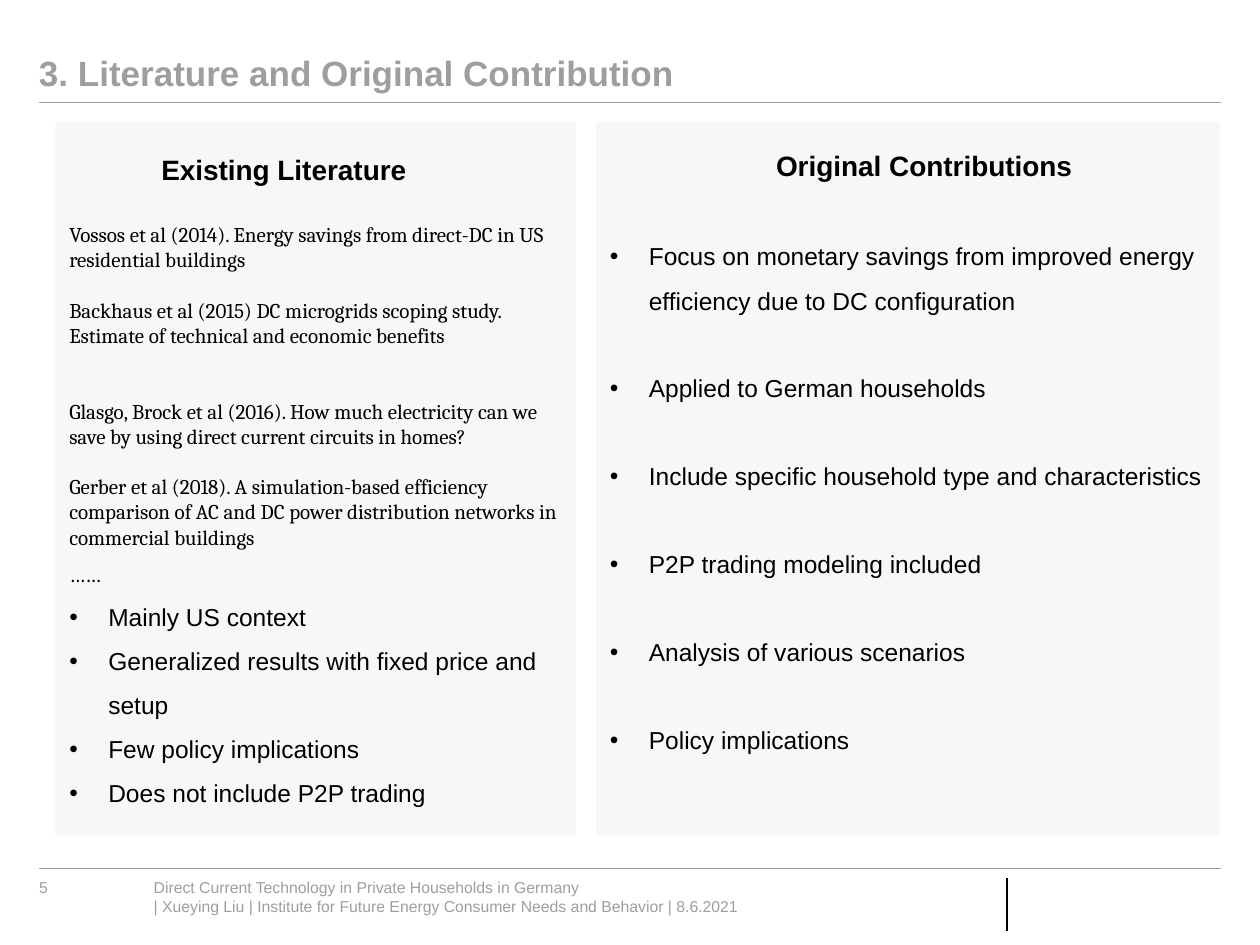
from lxml import etree
from pptx import Presentation
from pptx.dml.color import RGBColor
from pptx.enum.shapes import MSO_CONNECTOR, MSO_SHAPE
from pptx.enum.text import MSO_ANCHOR, PP_ALIGN
from pptx.oxml.ns import qn
from pptx.util import Inches, Pt

GRAY = RGBColor(0x9D, 0x9E, 0xA0)
PANEL_GRAY = RGBColor(0xD8, 0xD8, 0xD9)
BLACK = RGBColor(0, 0, 0)

TITLE = "3. Literature and Original Contribution"
FOOTER = [
    "Direct Current Technology in Private Households in Germany",
    "| Xueying Liu | Institute for Future Energy Consumer Needs and Behavior | 8.6.2021",
]
PAGE_NUMBER = "5"
LITERATURE = [
    ("Vossos et al (2014). Energy savings from direct-DC in US residential buildings", 0),
    ("Backhaus et al (2015) DC microgrids scoping study. "
     "Estimate of technical and economic benefits", 14.4),
    ("Glasgo, Brock et al (2016). How much electricity can we save by using "
     "direct current circuits in homes?", 28.8),
    ("Gerber et al (2018). A simulation-based efficiency comparison of AC and DC "
     "power distribution networks in commercial buildings", 14.4),
]
LIMITATIONS = [
    "Mainly US context",
    "Generalized results with fixed price and setup",
    "Few policy implications",
    "Does not include P2P trading",
]
CONTRIBUTIONS = [
    "Focus on monetary savings from improved energy efficiency due to DC configuration",
    "Applied to German households",
    "Include specific household type and characteristics",
    "P2P trading modeling included",
    "Analysis of various scenarios",
    "Policy implications",
]
RULES = [
    (0.31, 0.81, 9.69, 0.81, GRAY, 0.5),
    (0.31, 6.89, 9.69, 6.89, GRAY, 0.5),
    (7.99, 6.97, 7.99, 7.39, BLACK, 1.25),
]
PANEL_TOP, PANEL_HEIGHT = 0.97, 5.66
BULLET_INDENT = Inches(0.31)


def add_paragraph(frame, text, size, color=BLACK, font="Arial", bold=False,
                  spacing=None, before=0, bullet=False, align=PP_ALIGN.LEFT):
    paragraph = frame.paragraphs[0]
    if paragraph.runs:
        paragraph = frame.add_paragraph()
    paragraph.alignment = align
    paragraph.space_before = Pt(before)
    if spacing:
        paragraph.line_spacing = spacing
    if bullet:
        properties = paragraph._p.get_or_add_pPr()
        properties.set("marL", str(BULLET_INDENT))
        properties.set("indent", str(-BULLET_INDENT))
        etree.SubElement(properties, qn("a:buFont")).set("typeface", "Arial")
        etree.SubElement(properties, qn("a:buChar")).set("char", "•")
    run = paragraph.add_run()
    run.text = text
    run.font.name = font
    run.font.size = Pt(size)
    run.font.bold = bold
    run.font.color.rgb = color


def prepare_frame(shape, anchor, side=0, top=0):
    frame = shape.text_frame
    frame.word_wrap = True
    frame.vertical_anchor = anchor
    frame.margin_left = frame.margin_right = Inches(side)
    frame.margin_top = Inches(top)
    frame.margin_bottom = 0
    return frame


def add_text(slide, left, top, width, height, lines, size, color=BLACK,
             anchor=MSO_ANCHOR.TOP, **style):
    box = slide.shapes.add_textbox(Inches(left), Inches(top), Inches(width), Inches(height))
    frame = prepare_frame(box, anchor)
    for line in lines:
        add_paragraph(frame, line, size, color, **style)


def add_panel(slide, left, width, text_offset):
    panel = slide.shapes.add_shape(MSO_SHAPE.RECTANGLE, Inches(left), Inches(PANEL_TOP),
                                   Inches(width), Inches(PANEL_HEIGHT))
    panel.shadow.inherit = False
    panel.fill.solid()
    panel.fill.fore_color.rgb = PANEL_GRAY
    color = panel.fill._xPr.find(qn("a:solidFill"))[0]
    etree.SubElement(color, qn("a:alpha")).set("val", "20000")
    panel.line.fill.background()
    return prepare_frame(panel, MSO_ANCHOR.TOP, 0.11, text_offset)


def add_rule(slide, x1, y1, x2, y2, color, weight):
    rule = slide.shapes.add_connector(MSO_CONNECTOR.STRAIGHT, Inches(x1), Inches(y1),
                                      Inches(x2), Inches(y2))
    rule.line.color.rgb = color
    rule.line.width = Pt(weight)
    etree.SubElement(rule._element.spPr, qn("a:effectLst"))


def main():
    presentation = Presentation()
    presentation.slide_width = Inches(10)
    presentation.slide_height = Inches(7.5)
    slide = presentation.slides.add_slide(presentation.slide_layouts[6])

    for rule in RULES:
        add_rule(slide, *rule)
    add_text(slide, 1.22, 6.97, 5.41, 0.47, FOOTER, 9, GRAY)
    add_text(slide, 0.31, 6.97, 0.72, 0.15, [PAGE_NUMBER], 9, GRAY)
    add_text(slide, 0.31, 0.16, 9.37, 0.59, [TITLE], 20, GRAY,
             anchor=MSO_ANCHOR.BOTTOM, bold=True, spacing=0.9)

    contributions = add_panel(slide, 4.73, 4.95, 0.83)
    for index, text in enumerate(CONTRIBUTIONS):
        add_paragraph(contributions, text, 14, spacing=1.5,
                      before=25 if index else 0, bullet=True)

    literature = add_panel(slide, 0.44, 4.13, 0.79)
    for text, gap in LITERATURE:
        add_paragraph(literature, text, 12, font="Cambria", before=gap)
    add_paragraph(literature, "……", 12, font="Cambria", spacing=1.5)
    for text in LIMITATIONS:
        add_paragraph(literature, text, 14, spacing=1.5, bullet=True)

    add_text(slide, 1.28, 1.21, 2.31, 0.54, ["Existing Literature"], 16, bold=True)
    add_text(slide, 6.14, 1.21, 2.39, 0.24, ["Original Contributions"], 16, bold=True,
             spacing=0.9, align=PP_ALIGN.CENTER)

    presentation.save("out.pptx")


if __name__ == "__main__":
    main()
